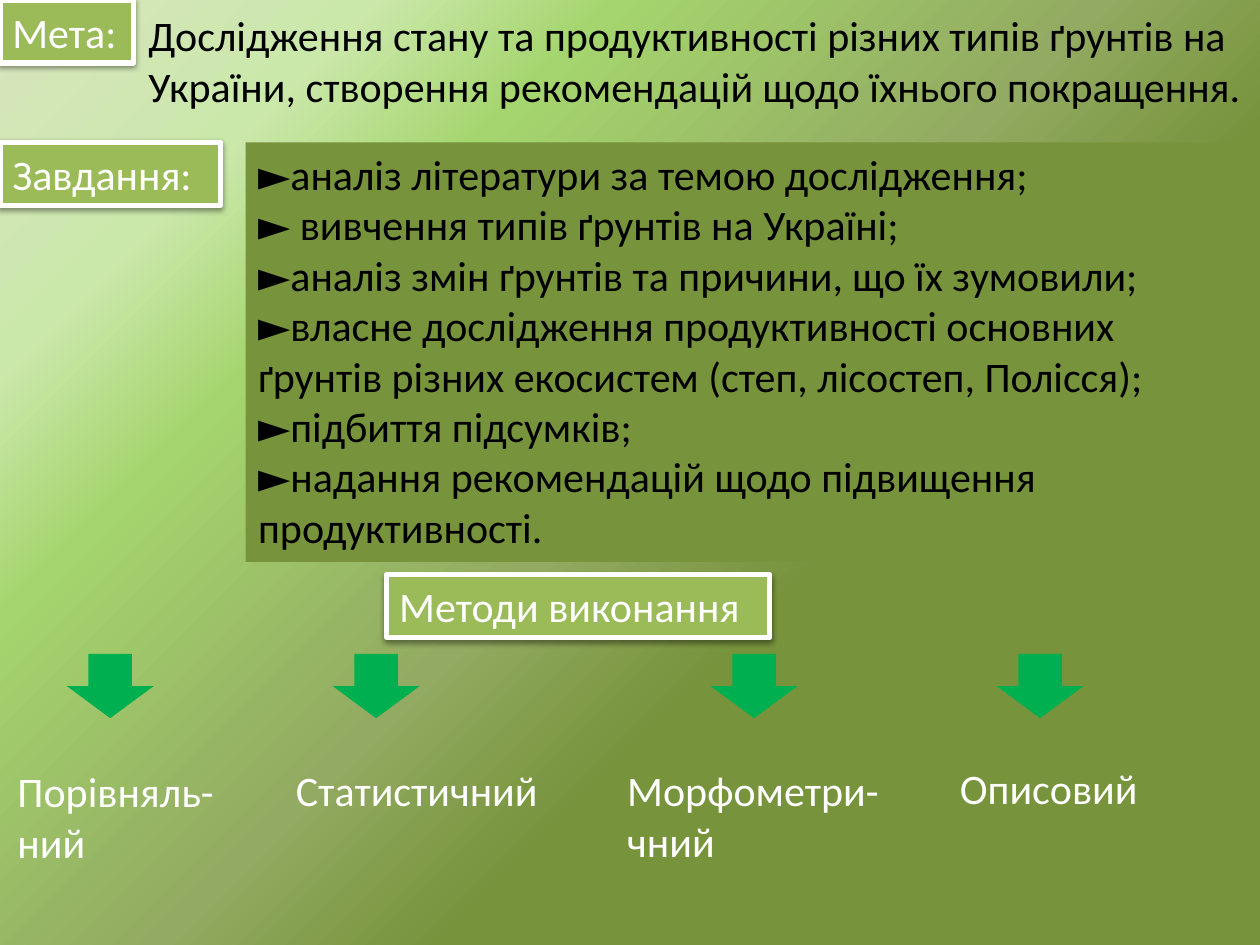
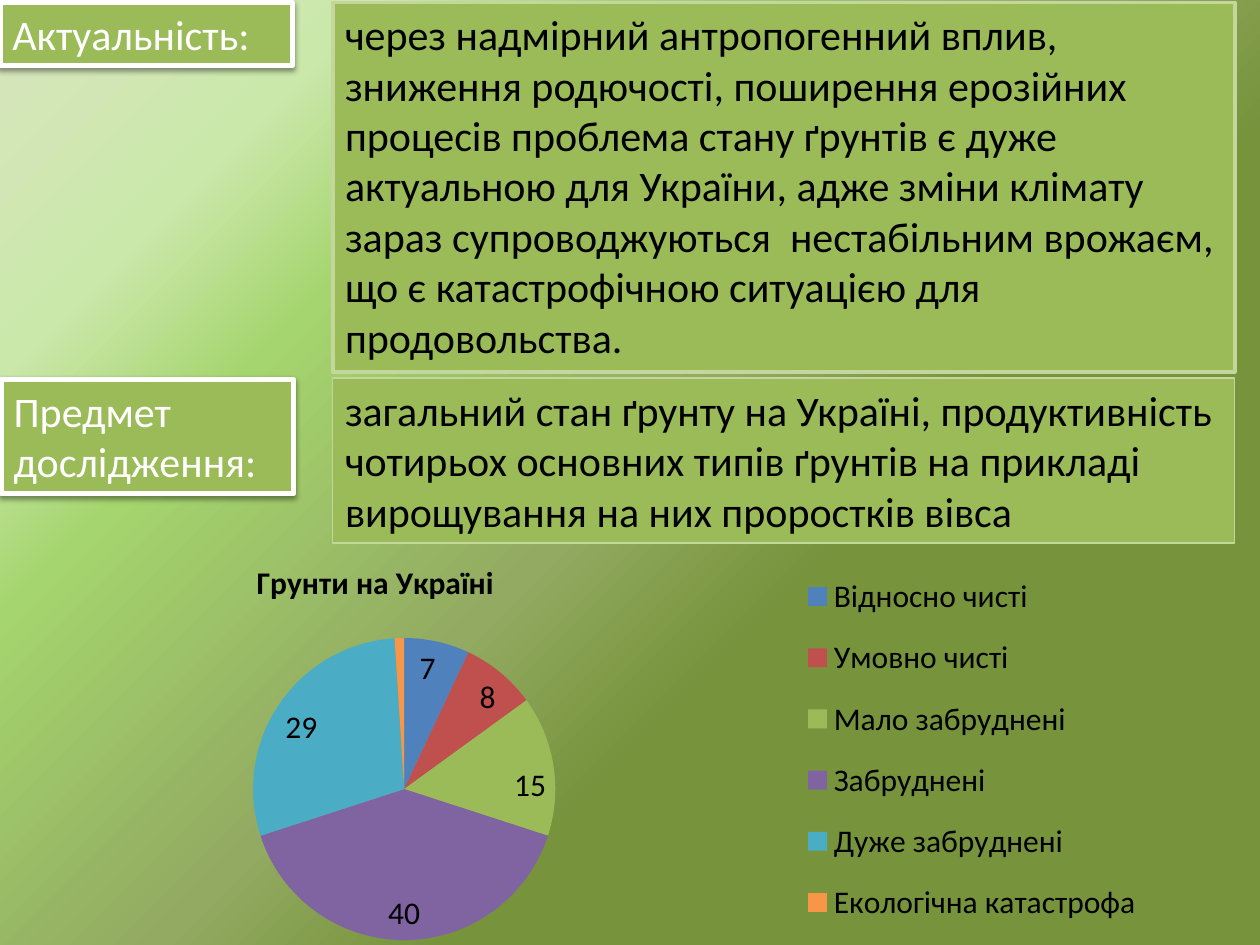
import pptx
import pptx.chart.data
import pptx.enum.chart
import pptx.enum.shapes
import pptx.enum.text
import pptx.util
from lxml import etree
from pptx.oxml.ns import qn

COLS, ROWS = 100, 75
CELL = pptx.util.Inches(0.1)
FONT = "Calibri"
BLACK, WHITE = "000000", "FFFFFF"
OLIVE, LEAF, PALE, ARROW = "77933C", "9BBB59", "C3D69B", "00B050"
STOPS = [(37, OLIVE, 100), (50, "92AA61", 100), (72, "A5D56E", 100),
         (83, "CBE8AB", 40), (100, "D7E4BD", 100)]

AIM = ("Дослідження стану та продуктивності різних типів ґрунтів на України, "
       "створення рекомендацій щодо їхнього покращення.")
TASKS = [
    "►аналіз літератури за темою дослідження;",
    "► вивчення типів ґрунтів на Україні;",
    "►аналіз змін ґрунтів та причини, що їх зумовили;",
    "►власне дослідження продуктивності основних ґрунтів різних екосистем "
    "(степ, лісостеп, Полісся);",
    "►підбиття підсумків;",
    "►надання рекомендацій щодо підвищення продуктивності.",
]
METHODS = [
    (5.3, (0.4, 60.3, 19.1, 9.1), ["Порівняль-", "ний"]),
    (26.4, (22.5, 60.2, 21.4, 5), ["Статистичний"]),
    (56.4, (48.8, 60.2, 22.4, 9.1), ["Морфометри-чний"]),
    (79.1, (75.2, 60, 16.9, 5), ["Описовий"]),
]
NEED = ("через надмірний антропогенний вплив, зниження родючості, поширення "
        "ерозійних процесів проблема стану ґрунтів є дуже актуальною для України, "
        "адже зміни клімату зараз супроводжуються  нестабільним врожаєм, що є "
        "катастрофічною ситуацією для продовольства.")
TOPIC = ("загальний стан ґрунту на Україні, продуктивність чотирьох основних типів "
         "ґрунтів на прикладі вирощування на них проростків вівса")
SOILS = [
    ("Відносно чисті", 7, "4F81BD"),
    ("Умовно чисті", 8, "C0504D"),
    ("Мало забруднені", 15, LEAF),
    ("Забруднені", 40, "8064A2"),
    ("Дуже забруднені", 29, "4BACC6"),
    ("Екологічна катастрофа", 1, "F79646"),
]


def paint(fill, tint):
    fill.solid()
    fill.fore_color.rgb = pptx.dml.color.RGBColor.from_string(tint)


def style(font, size, tint):
    font.name = FONT
    font.size = pptx.util.Pt(size)
    font.color.rgb = pptx.dml.color.RGBColor.from_string(tint)


def grid(spot):
    return [round(part * CELL) for part in spot]


def tint_node(home, tint, alpha):
    node = etree.SubElement(home, qn("a:srgbClr"), val=tint)
    if alpha < 100:
        etree.SubElement(node, qn("a:alpha"), val=str(alpha * 1000))


def add_slide(deck):
    slide = deck.slides.add_slide(deck.slide_layouts[6])
    fill = slide.background.fill
    fill.gradient()
    fill.gradient_angle = 135
    stops = slide.element.xpath(".//a:gsLst")[0]
    for old in list(stops):
        stops.remove(old)
    for place, tint, alpha in STOPS:
        stop = etree.SubElement(stops, qn("a:gs"), pos=str(place * 1000))
        tint_node(stop, tint, alpha)
    return slide


def write(shape, lines, tint):
    frame = shape.text_frame
    frame.word_wrap = True
    frame.auto_size = pptx.enum.text.MSO_AUTO_SIZE.SHAPE_TO_FIT_TEXT
    frame.vertical_anchor = pptx.enum.text.MSO_ANCHOR.TOP
    for row, line in enumerate(lines):
        para = frame.add_paragraph() if row else frame.paragraphs[0]
        para.alignment = pptx.enum.text.PP_ALIGN.LEFT
        run = para.add_run()
        run.text = line
        style(run.font, 24, tint)


def add_text(slide, spot, lines, tint):
    write(slide.shapes.add_textbox(*grid(spot)), lines, tint)


def add_form(slide, kind, spot, tint, edge=None, width=0):
    shape = slide.shapes.add_shape(kind, *grid(spot))
    shape.shadow.inherit = False
    paint(shape.fill, tint)
    if edge:
        paint(shape.line.fill, edge)
        shape.line.width = pptx.util.Pt(width)
    else:
        shape.line.fill.background()
    return shape


def add_panel(slide, spot, lines, tint, edge=None, width=0):
    kind = pptx.enum.shapes.MSO_SHAPE.RECTANGLE
    write(add_form(slide, kind, spot, tint, edge, width), lines, BLACK)


def add_label(slide, spot, text):
    kind = pptx.enum.shapes.MSO_SHAPE.RECTANGLE
    shape = add_form(slide, kind, spot, LEAF, WHITE, 3)
    write(shape, [text], WHITE)
    effect = shape.element.spPr.find(qn("a:effectLst"))
    shade = etree.SubElement(effect, qn("a:outerShdw"), blurRad="40000",
                             dist="20000", dir="5400000", rotWithShape="0")
    tint_node(shade, BLACK, 38)


def add_arrow(slide, left):
    kind = pptx.enum.shapes.MSO_SHAPE.DOWN_ARROW
    add_form(slide, kind, (left, 51.9, 6.9, 5.1), ARROW)


def arrange(node, index, inner=False, **shares):
    for old in node.findall(qn("c:layout")):
        node.remove(old)
    layout = etree.Element(qn("c:layout"))
    manual = etree.SubElement(layout, qn("c:manualLayout"))
    if inner:
        etree.SubElement(manual, qn("c:layoutTarget"), val="inner")
    for axis in "xy":
        etree.SubElement(manual, qn(f"c:{axis}Mode"), val="edge")
    for key, share in shares.items():
        etree.SubElement(manual, qn(f"c:{key}"), val=str(share))
    node.insert(index, layout)


def add_pie(slide, spot, title, rows):
    data = pptx.chart.data.CategoryChartData()
    data.categories = [name for name, _, _ in rows]
    data.add_series(title, [value for _, value, _ in rows])
    kind = pptx.enum.chart.XL_CHART_TYPE.PIE
    chart = slide.shapes.add_chart(kind, *grid(spot), data).chart
    style(chart.font, 18, BLACK)
    chart.has_title = True
    run = chart.chart_title.text_frame.paragraphs[0].add_run()
    run.text = title
    style(run.font, 18, BLACK)
    run.font.bold = True
    chart.has_legend = True
    chart.legend.position = pptx.enum.chart.XL_LEGEND_POSITION.RIGHT
    chart.legend.include_in_layout = False
    plot = chart.plots[0]
    plot.vary_by_categories = True
    series = plot.series[0]
    series.data_labels.show_value = False
    for index, (_, value, tint) in enumerate(rows):
        point = series.points[index]
        paint(point.format.fill, tint)
        if value > 1:
            point.data_label.position = pptx.enum.chart.XL_LABEL_POSITION.INSIDE_END
    root = chart.element
    arrange(root.xpath("./c:chart/c:title")[0], 1, x=0.19, y=0.13)
    arrange(root.xpath(".//c:legend")[0], 1, x=0.66, y=0.13, w=0.33, h=0.84)
    arrange(root.xpath(".//c:plotArea")[0], 0, True, x=0.19, y=0.31, w=0.27, h=0.65)


def main():
    deck = pptx.Presentation()
    deck.slide_width, deck.slide_height = COLS * CELL, ROWS * CELL

    goals = add_slide(deck)
    add_text(goals, (10.8, 0.3, 90.5, 9.1), [AIM], BLACK)
    add_label(goals, (0, 0, 10.6, 5), "Мета:")
    add_label(goals, (0, 11.3, 17.5, 5), "Завдання:")
    add_panel(goals, (19.5, 11.3, 80.5, 33.3), TASKS, OLIVE)
    add_label(goals, (30.7, 45.6, 30.4, 5), "Методи виконання")
    for left, spot, lines in METHODS:
        add_arrow(goals, left)
        add_text(goals, spot, lines, WHITE)

    scope = add_slide(deck)
    add_panel(scope, (26.4, 0.2, 71.6, 29.3), [NEED], LEAF, PALE, 2.25)
    add_label(scope, (0, 0.2, 23.2, 5), "Актуальність:")
    add_label(scope, (0.1, 30.1, 23.2, 9.1), "Предмет дослідження:")
    add_panel(scope, (26.4, 30, 71.6, 13.1), [TOPIC], LEAF, PALE, 0.75)
    add_pie(scope, (2.8, 39.2, 90.1, 36.9), "Грунти на Україні", SOILS)

    deck.save("out.pptx")


if __name__ == "__main__":
    main()
